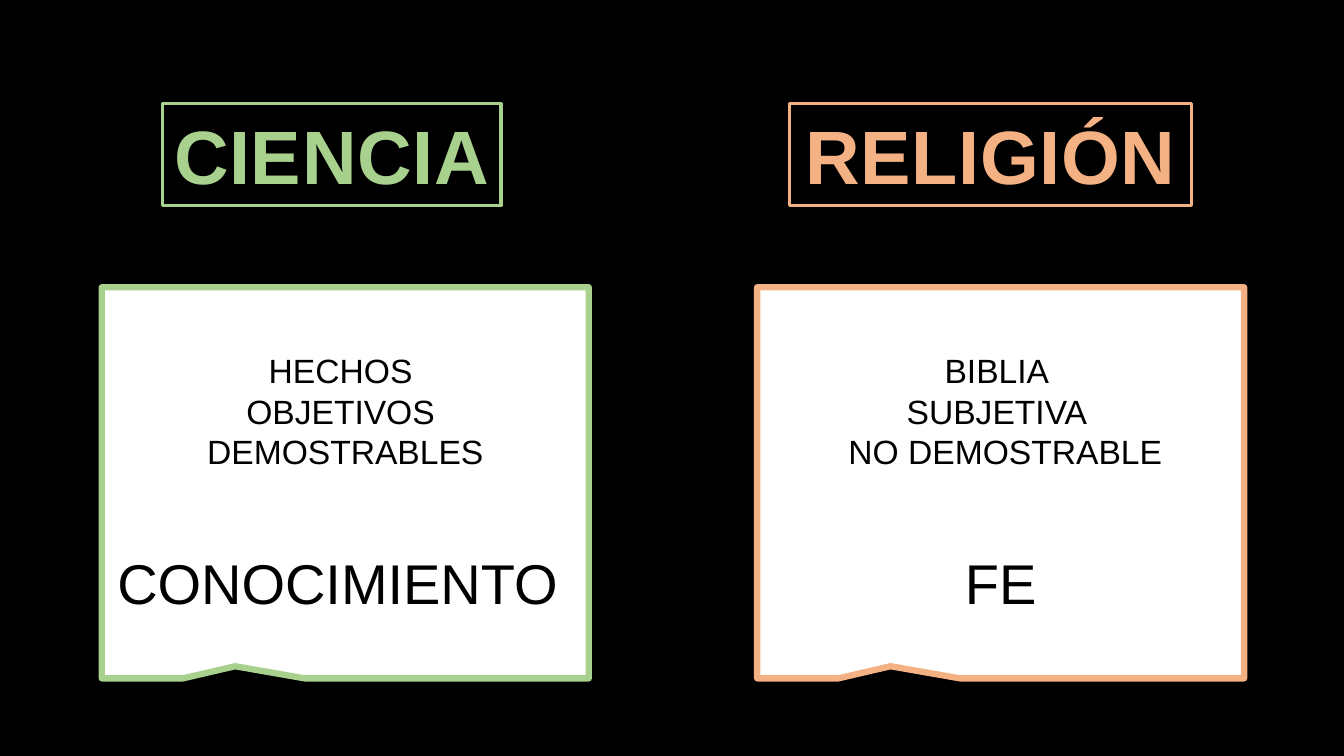
import pptx
import pptx.util
import pptx.dml.color
import pptx.enum.shapes
import pptx.enum.text
import pptx.oxml.ns

Inches, Pt = pptx.util.Inches, pptx.util.Pt
RGBColor = pptx.dml.color.RGBColor
SHAPE = pptx.enum.shapes.MSO_SHAPE
ANCHOR = pptx.enum.text.MSO_ANCHOR
ALIGN = pptx.enum.text.PP_ALIGN
AUTO_SIZE = pptx.enum.text.MSO_AUTO_SIZE

BLACK = RGBColor(0x00, 0x00, 0x00)
WHITE = RGBColor(0xFF, 0xFF, 0xFF)
GREEN = RGBColor(0xA9, 0xD1, 0x8E)
ORANGE = RGBColor(0xF4, 0xB1, 0x83)

COLUMNS = [
    {"title": "CIENCIA", "title_left": 1.61, "title_width": 3.36, "wrap": False,
     "color": GREEN, "traits": ["HECHOS ", "OBJETIVOS ", "DEMOSTRABLES"],
     "conclusion": "CONOCIMIENTO "},
    {"title": "RELIGIÓN", "title_left": 7.83, "title_width": 3.99, "wrap": True,
     "color": ORANGE, "traits": ["BIBLIA ", "SUBJETIVA ", " NO DEMOSTRABLE"],
     "conclusion": "FE"},
]

SLIDE_W, SLIDE_H = 13.33, 7.5
TITLE_TOP, TITLE_H = 1.03, 1.01
CARD_LEFT, CARD_STEP = 1.01, 6.5
CARD_TOP, CARD_W, CARD_H = 2.85, 4.83, 3.88
CARD_TIP = (-0.226, 0.469)
TRAIT_SIZE, CONCLUSION_SIZE, TITLE_SIZE = 24, 40, 54
CONCLUSION_GAP = 2 * 1.15 * TRAIT_SIZE


def add_box(s, kind, left, top, width, height, fill, line, weight):
    sp = s.shapes.add_shape(kind, Inches(left), Inches(top), Inches(width), Inches(height))
    sp.shadow.inherit = False
    if fill is None:
        sp.fill.background()
    else:
        sp.fill.solid()
        sp.fill.fore_color.rgb = fill
    sp.line.color.rgb = line
    sp.line.width = Pt(weight)
    return sp


def write(p, text, size, color, bold=False):
    r = p.add_run()
    r.text = text
    p.alignment = ALIGN.CENTER
    p.font.name = "Arial"
    p.font.size = Pt(size)
    p.font.color.rgb = color
    p.font.bold = bold
    return r


def add_title(s, column):
    sp = add_box(s, SHAPE.RECTANGLE, column["title_left"], TITLE_TOP,
                 column["title_width"], TITLE_H, None, column["color"], 2.25)
    tf = sp.text_frame
    tf.word_wrap = column["wrap"]
    tf.auto_size = AUTO_SIZE.SHAPE_TO_FIT_TEXT
    tf.vertical_anchor = ANCHOR.TOP
    r = write(tf.paragraphs[0], column["title"], TITLE_SIZE, column["color"], True)
    r.font._element.set("spc", "50")


def add_card(s, column, left):
    sp = add_box(s, SHAPE.RECTANGULAR_CALLOUT, left, CARD_TOP, CARD_W, CARD_H,
                 WHITE, column["color"], 4.5)
    for i, value in enumerate(CARD_TIP):
        sp.adjustments[i] = value
    tf = sp.text_frame
    tf.word_wrap = True
    tf.vertical_anchor = ANCHOR.MIDDLE
    for i, trait in enumerate(column["traits"]):
        p = tf.add_paragraph() if i else tf.paragraphs[0]
        write(p, trait, TRAIT_SIZE, BLACK)
    p = tf.add_paragraph()
    p.space_before = Pt(CONCLUSION_GAP)
    write(p, column["conclusion"], CONCLUSION_SIZE, BLACK)


def main():
    prs = pptx.Presentation()
    prs.slide_width, prs.slide_height = Inches(SLIDE_W), Inches(SLIDE_H)
    s = prs.slides.add_slide(prs.slide_layouts[6])
    add_box(s, SHAPE.RECTANGLE, 0, 0, SLIDE_W, SLIDE_H, BLACK, BLACK, 1)
    for i, column in enumerate(COLUMNS):
        add_card(s, column, CARD_LEFT + i * CARD_STEP)
        add_title(s, column)
    prs.save("out.pptx")


if __name__ == "__main__":
    main()
